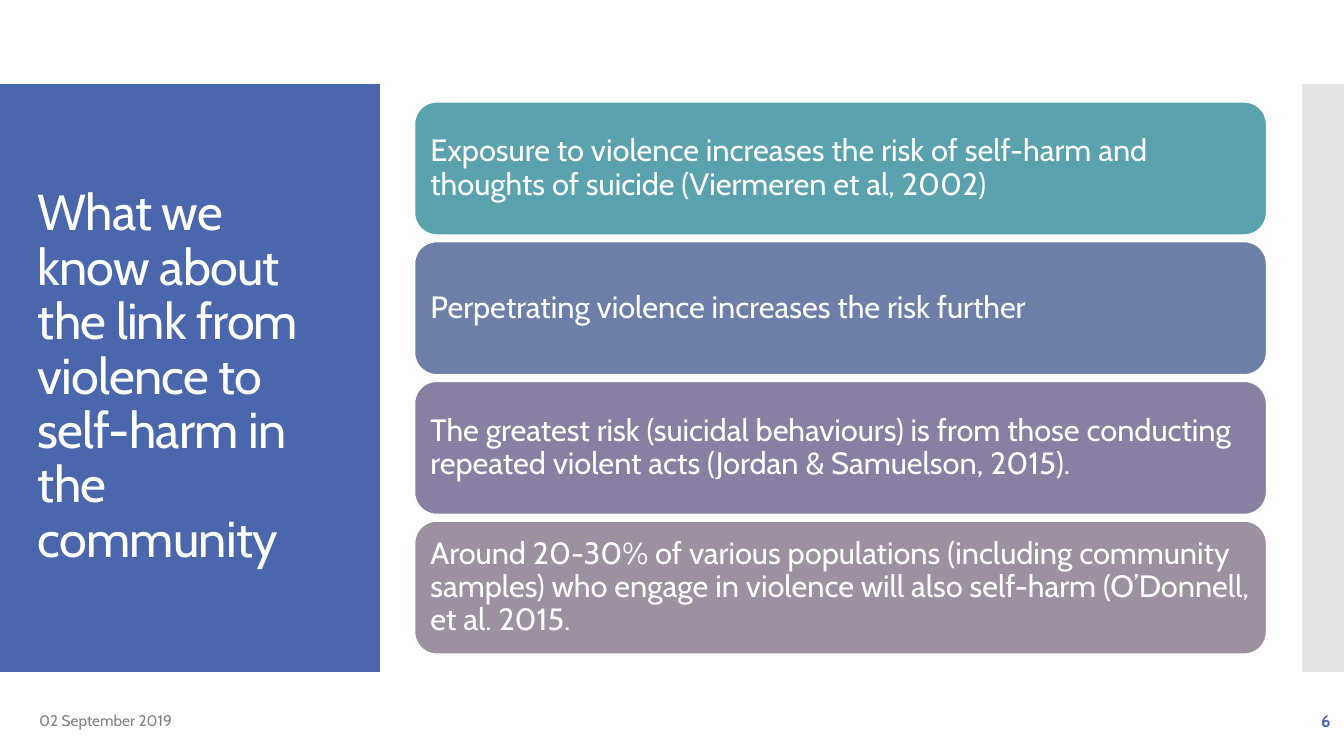
from lxml.etree import SubElement
from pptx import Presentation
from pptx.dml.color import RGBColor
from pptx.enum.shapes import MSO_SHAPE
from pptx.enum.text import MSO_ANCHOR, PP_ALIGN
from pptx.oxml.ns import qn
from pptx.util import Pt

BLUE = RGBColor(0x4A, 0x66, 0xAC)
SILVER = RGBColor(0xC8, 0xC8, 0xC8)
GRAY = RGBColor(0x80, 0x80, 0x80)
WHITE = RGBColor(0xFF, 0xFF, 0xFF)
TEAL = RGBColor(0x5A, 0xA2, 0xAE)
SLATE = RGBColor(0x6D, 0x7F, 0xA8)
PURPLE = RGBColor(0x88, 0x7F, 0xA3)
MAUVE = RGBColor(0x9D, 0x90, 0xA0)

CARD_TOP, CARD_HEIGHT, CARD_PITCH = 72.9, 94.9, 99.8
FINDINGS = [
    (TEAL, "Exposure to violence increases the risk of self-harm and "
           "thoughts of suicide (Viermeren et al, 2002)"),
    (SLATE, "Perpetrating violence increases the risk further"),
    (PURPLE, "The greatest risk (suicidal behaviours) is from those conducting "
             "repeated violent acts (Jordan & Samuelson, 2015)."),
    (MAUVE, "Around 20-30% of various populations (including community samples) "
            "who engage in violence will also self-harm (O’Donnell, et al. 2015."),
]


def write_text(shape, text, *, font, size, color, bold=False, align=PP_ALIGN.LEFT,
               line_spacing=1.0, tracking=None, inset=None):
    """Write one vertically centred paragraph into a shape."""
    frame = shape.text_frame
    frame.word_wrap = True
    frame.vertical_anchor = MSO_ANCHOR.MIDDLE
    if inset is not None:
        frame.margin_left = frame.margin_right = Pt(inset)
        frame.margin_top = frame.margin_bottom = Pt(inset)
    paragraph = frame.paragraphs[0]
    paragraph.alignment = align
    paragraph.line_spacing = line_spacing
    run = paragraph.add_run()
    run.text = text
    run.font.name = font
    run.font.size = Pt(size)
    run.font.bold = bold
    run.font.color.rgb = color
    if tracking is not None:
        run.font._element.set("spc", str(round(tracking * 100)))


class SlideBuilder:
    """Hold the slide and its font, and add each kind of element."""

    def __init__(self, slide, font):
        self.slide = slide
        self.font = font

    def panel(self, left, top, width, height, color,
              kind=MSO_SHAPE.RECTANGLE, opacity=None):
        """Add a filled shape without an outline or shadow."""
        shape = self.slide.shapes.add_shape(
            kind, Pt(left), Pt(top), Pt(width), Pt(height))
        shape.shadow.inherit = False
        shape.fill.solid()
        shape.fill.fore_color.rgb = color
        shape.line.fill.background()
        if opacity is not None:
            fill_color = shape._element.spPr.find(qn("a:solidFill"))[0]
            SubElement(fill_color, qn("a:alpha"), val=str(opacity * 1000))
        return shape

    def card(self, left, top, width, height, color, text):
        """Add a rounded card with a thin white outline and its text."""
        shape = self.panel(left, top, width, height, color,
                           MSO_SHAPE.ROUNDED_RECTANGLE)
        shape.line.color.rgb = WHITE
        shape.line.width = Pt(0.85)
        write_text(shape, text, font=self.font, size=22, color=WHITE,
                   line_spacing=0.9, inset=6.6)

    def label(self, left, top, width, height, text, **text_format):
        """Add a text box."""
        box = self.slide.shapes.add_textbox(
            Pt(left), Pt(top), Pt(width), Pt(height))
        write_text(box, text, font=self.font, **text_format)


def main():
    """Build and save the slide."""
    presentation = Presentation()
    presentation.slide_width = Pt(960)
    presentation.slide_height = Pt(540)
    slide = presentation.slides.add_slide(presentation.slide_layouts[6])
    builder = SlideBuilder(slide, "Cabin")

    builder.panel(0, 60, 271.3, 420, BLUE)
    builder.panel(930.2, 60, 29.8, 420, SILVER, opacity=50)
    builder.label(20, 88.8, 232, 362,
                  "What we know about the link from violence to self-harm "
                  "in the community",
                  size=36, color=WHITE, line_spacing=0.9, tracking=-0.6)
    for index, (color, text) in enumerate(FINDINGS):
        builder.card(296.2, CARD_TOP + index * CARD_PITCH, 608.4, CARD_HEIGHT,
                     color, text)
    builder.label(20.9, 500.5, 216, 28.8, "02 September 2019",
                  size=11, color=GRAY)
    builder.label(837.4, 500.5, 120, 28.8, "6", size=12, color=BLUE,
                  bold=True, align=PP_ALIGN.RIGHT)
    presentation.save("out.pptx")


if __name__ == "__main__":
    main()
